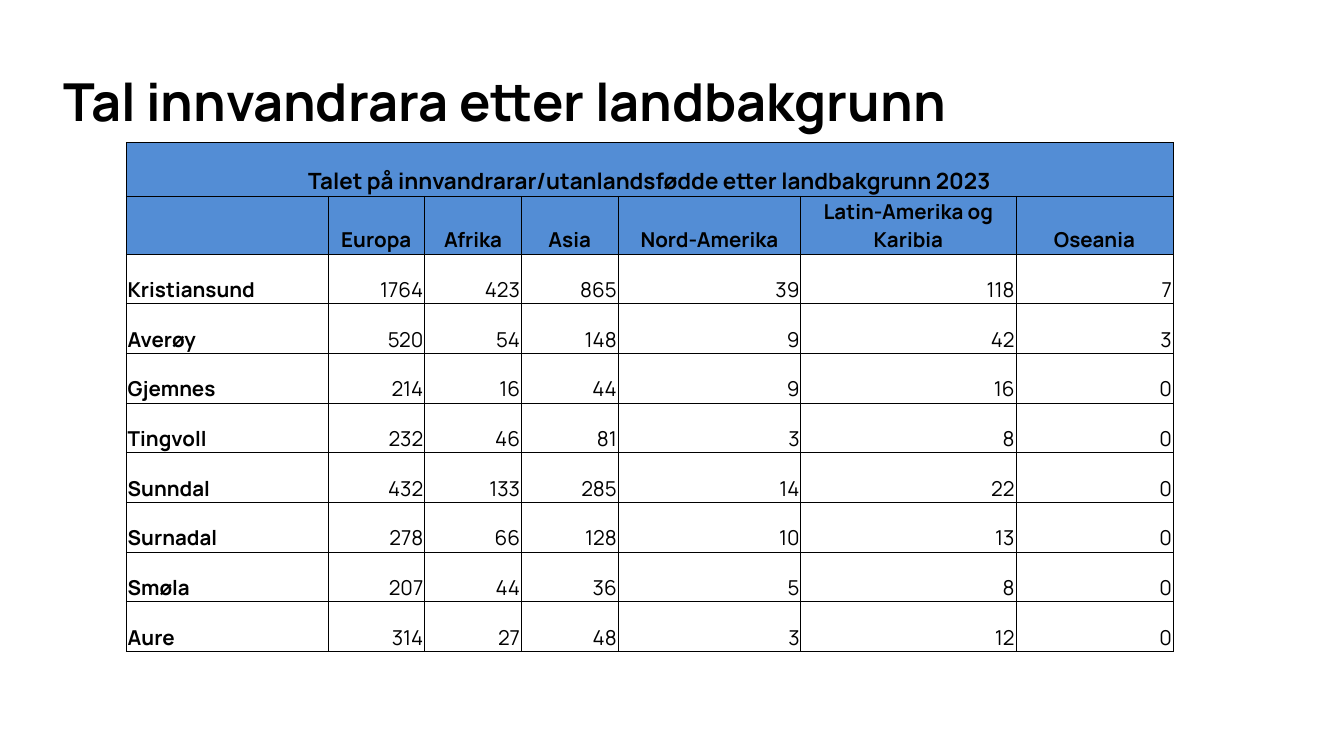
from lxml.etree import SubElement
from pptx import Presentation
from pptx.dml.color import RGBColor
from pptx.enum.text import MSO_ANCHOR, PP_ALIGN
from pptx.oxml.ns import qn
from pptx.util import Inches, Pt

BLACK = RGBColor(0x00, 0x00, 0x00)
HEADER_BLUE = RGBColor(0x53, 0x8D, 0xD5)
FONT = "Manrope"

TITLE = "Tal innvandrara etter landbakgrunn"
TABLE_TITLE = "Talet på innvandrarar/utanlandsfødde etter landbakgrunn 2023"
REGIONS = ["", "Europa", "Afrika", "Asia", "Nord-Amerika",
           "Latin-Amerika og Karibia", "Oseania"]
MUNICIPALITIES = [
    ("Kristiansund", 1764, 423, 865, 39, 118, 7),
    ("Averøy", 520, 54, 148, 9, 42, 3),
    ("Gjemnes", 214, 16, 44, 9, 16, 0),
    ("Tingvoll", 232, 46, 81, 3, 8, 0),
    ("Sunndal", 432, 133, 285, 14, 22, 0),
    ("Surnadal", 278, 66, 128, 10, 13, 0),
    ("Smøla", 207, 44, 36, 5, 8, 0),
    ("Aure", 314, 27, 48, 3, 12, 0),
]
COLUMN_WIDTHS = [1.5, 0.72, 0.72, 0.72, 1.36, 1.6, 1.17]
TITLE_ROW_HEIGHT = 0.4
ROW_HEIGHT = 0.37

CELL_FORMAT = {
    "margin_left": Inches(0.01),
    "margin_top": Inches(0.01),
    "margin_right": Inches(0.01),
    "margin_bottom": 0,
    "vertical_anchor": MSO_ANCHOR.BOTTOM,
}
TITLE_FORMAT = {
    "margin_left": Inches(0.04),
    "margin_top": Inches(0.02),
    "margin_right": Inches(0.04),
    "margin_bottom": Inches(0.02),
    "vertical_anchor": MSO_ANCHOR.TOP,
    "word_wrap": True,
}


def apply_format(target, values):
    """Set each attribute of the target from a dict."""
    for name, value in values.items():
        setattr(target, name, value)


def write_text(paragraph, text, size, bold):
    """Add one black run to the paragraph."""
    run = paragraph.add_run()
    run.text = text
    apply_format(run.font, {"name": FONT, "size": Pt(size), "bold": bold})
    run.font.color.rgb = BLACK


def add_borders(cell):
    """Draw a thin black line on all four sides of the cell."""
    properties = cell._tc.get_or_add_tcPr()
    for side in ("lnL", "lnR", "lnT", "lnB"):
        line = SubElement(properties, qn(f"a:{side}"), w=str(Pt(0.5)))
        fill = SubElement(line, qn("a:solidFill"))
        SubElement(fill, qn("a:srgbClr"), val=str(BLACK))


def style_cell(cell, is_header):
    """Give the cell its margins, borders and fill."""
    apply_format(cell, CELL_FORMAT)
    add_borders(cell)
    if is_header:
        cell.fill.solid()
        cell.fill.fore_color.rgb = HEADER_BLUE
    else:
        cell.fill.background()


def add_title(slide, left, top, width, height):
    """Place the slide title in the given box."""
    box = slide.shapes.add_textbox(
        Inches(left), Inches(top), Inches(width), Inches(height))
    apply_format(box.text_frame, TITLE_FORMAT)
    paragraph = box.text_frame.paragraphs[0]
    paragraph.line_spacing = 1.03
    write_text(paragraph, TITLE, 28, True)


def add_population_table(slide, left, top, width, height):
    """Place the table of immigrants by region in the given box."""
    rows = [[TABLE_TITLE] + [""] * (len(REGIONS) - 1), REGIONS, *MUNICIPALITIES]
    table = slide.shapes.add_table(
        len(rows), len(REGIONS),
        Inches(left), Inches(top), Inches(width), Inches(height)).table
    apply_format(table, {"first_row": False, "horz_banding": False})
    for column, column_width in zip(table.columns, COLUMN_WIDTHS):
        column.width = Inches(column_width)
    for row_index, values in enumerate(rows):
        is_header = row_index < 2
        table.rows[row_index].height = Inches(ROW_HEIGHT if row_index else TITLE_ROW_HEIGHT)
        for column_index, value in enumerate(values):
            cell = table.cell(row_index, column_index)
            style_cell(cell, is_header)
            if value == "":
                continue
            paragraph = cell.text_frame.paragraphs[0]
            is_label = column_index == 0
            if is_header:
                paragraph.alignment = PP_ALIGN.CENTER
            else:
                paragraph.alignment = PP_ALIGN.LEFT if is_label else PP_ALIGN.RIGHT
            write_text(paragraph, str(value), 11 if row_index else 12,
                       is_header or is_label)
    table.cell(0, 0).merge(table.cell(0, len(REGIONS) - 1))


def main():
    """Build and save the presentation."""
    presentation = Presentation()
    presentation.slide_width = Inches(10)
    presentation.slide_height = Inches(10) * 9 // 16
    slide = presentation.slides.add_slide(presentation.slide_layouts[6])
    add_population_table(slide, 0.94, 1.06, 7.8, 3.74)
    add_title(slide, 0.43, 0.48, 9.15, 0.98)
    presentation.save("out.pptx")


if __name__ == "__main__":
    main()
